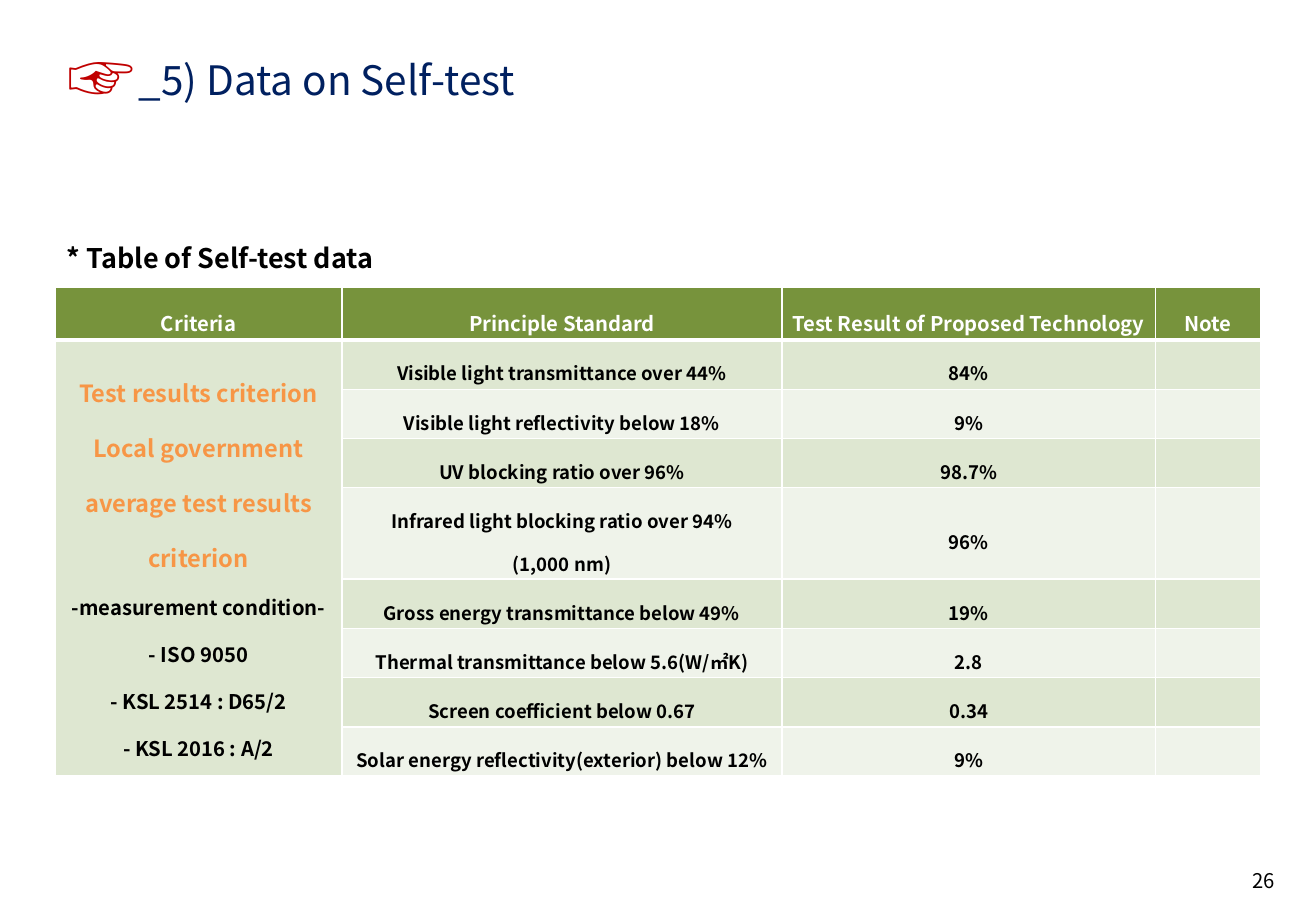
from lxml import etree
from pptx import Presentation
from pptx.dml.color import RGBColor
from pptx.enum.text import MSO_ANCHOR, MSO_AUTO_SIZE, PP_ALIGN
from pptx.oxml.ns import qn
from pptx.util import Cm, Pt

LEFT, CENTER, RIGHT = PP_ALIGN.LEFT, PP_ALIGN.CENTER, PP_ALIGN.RIGHT
TOP, MIDDLE = MSO_ANCHOR.TOP, MSO_ANCHOR.MIDDLE
FIXED = MSO_AUTO_SIZE.NONE

FONT = "Noto Sans CJK KR"
WHITE, BLACK, NAVY, RED, ORANGE = "FFFFFF", "000000", "002060", "C00000", "F79646"
HEADER_FILL = "77933C"
BAND_FILLS = ["DEE7D1", "EFF3EA"]

TITLE = "_5) Data on Self-test"
POINTER = "☞"
CAPTION = "* Table of Self-test data"
PAGE_NUMBER = "26"
HEADERS = ["Criteria", "Principle Standard", "Test Result of Proposed Technology", "Note"]
CRITERIA = [
    ("Test results criterion", 14, ORANGE),
    ("Local government average test results criterion", 14, ORANGE),
    ("-measurement condition-", 12, BLACK),
    ("- ISO 9050", 12, BLACK),
    ("- KSL 2514 : D65/2", 12, BLACK),
    ("- KSL 2016 : A/2", 12, BLACK),
]
RESULTS = [
    (["Visible light transmittance over 44%"], "84%"),
    (["Visible light reflectivity below 18%"], "9%"),
    (["UV blocking ratio over 96%"], "98.7%"),
    (["Infrared light blocking ratio over 94%", "(1,000 nm)"], "96%"),
    (["Gross energy transmittance below 49%"], "19%"),
    (["Thermal transmittance below 5.6(W/㎡K)"], "2.8"),
    (["Screen coefficient below 0.67"], "0.34"),
    (["Solar energy reflectivity(exterior) below 12%"], "9%"),
]
COLUMN_WIDTHS = [6, 9.2, 7.8, 2.2]
HEADER_HEIGHT, ROW_HEIGHT, TALL_ROW_HEIGHT = 1.1, 1.03, 1.91


def color(value):
    return RGBColor.from_string(value)


def style_font(font, size, ink, bold):
    font.name, font.size, font.bold = FONT, Pt(size), bold
    font.color.rgb = color(ink)


def write(frame, lines, align=LEFT, bold=False, spacing=None):
    for index, (text, size, ink) in enumerate(lines):
        para = frame.paragraphs[0] if index == 0 else frame.add_paragraph()
        para.alignment = align
        if spacing:
            para.line_spacing = spacing
        if not text:
            style_font(para.font, size, ink, bold)
            continue
        span = para.add_run()
        span.text = text
        style_font(span.font, size, ink, bold)
        latin = span.font._element.find(qn("a:latin"))
        east_asian = etree.Element(qn("a:ea"), typeface=FONT)
        latin.addnext(east_asian)


def add_text(page, place, line, align=LEFT, bold=False, anchor=TOP, wrap=True):
    box = page.shapes.add_textbox(*[Cm(length) for length in place])
    box.text_frame.word_wrap = wrap
    box.text_frame.vertical_anchor = anchor
    write(box.text_frame, [line], align, bold)


def add_borders(cell, top, bottom):
    properties = cell._tc.get_or_add_tcPr()
    for side, width in (("L", 1), ("R", 1), ("T", top), ("B", bottom)):
        line = etree.SubElement(properties, qn(f"a:ln{side}"), w=str(Pt(width)))
        fill = etree.SubElement(line, qn("a:solidFill"))
        etree.SubElement(fill, qn("a:srgbClr"), val=WHITE)


def format_cell(cell, row, fill):
    add_borders(cell, 3 if row == 1 else 1, 3 if row == 0 else 1)
    cell.fill.solid()
    cell.fill.fore_color.rgb = color(fill)
    cell.vertical_anchor = MIDDLE
    cell.margin_left = cell.margin_right = Cm(0.18)
    cell.margin_top = cell.margin_bottom = Cm(0.05)


def add_results_table(page):
    heights = [HEADER_HEIGHT] + [
        TALL_ROW_HEIGHT if len(standard) > 1 else ROW_HEIGHT for standard, _ in RESULTS
    ]
    table = page.shapes.add_table(
        len(heights), len(HEADERS), Cm(1.15), Cm(6.01),
        Cm(sum(COLUMN_WIDTHS)), Cm(sum(heights)),
    ).table
    for column, width in zip(table.columns, COLUMN_WIDTHS):
        column.width = Cm(width)
    for row, height in zip(table.rows, heights):
        row.height = Cm(height)

    content = [[[(text, 12, WHITE)] for text in HEADERS]]
    for index, (standard, result) in enumerate(RESULTS):
        content.append([
            CRITERIA if index == 0 else [("", 11, BLACK)],
            [(text, 11, BLACK) for text in standard],
            [(result, 11, BLACK)],
            [("", 11, BLACK)],
        ])
    table.cell(1, 0).merge(table.cell(len(RESULTS), 0))
    for row, cells in enumerate(content):
        for column, lines in enumerate(cells):
            cell = table.cell(row, column)
            band = 0 if column == 0 else (row - 1) % 2
            format_cell(cell, row, BAND_FILLS[band] if row else HEADER_FILL)
            write(cell.text_frame, lines, CENTER, True, 1.6)


def main():
    deck = Presentation()
    deck.slide_width, deck.slide_height = Cm(27.51), Cm(19.05)
    page = deck.slides.add_slide(deck.slide_layouts[5])

    title = page.shapes.title
    title.left, title.top, title.width, title.height = Cm(2.64), Cm(1.02), Cm(22.53), Cm(1.27)
    title.text_frame.auto_size = FIXED
    title.text_frame.word_wrap = True
    title.text_frame.vertical_anchor = TOP
    write(title.text_frame, [(TITLE, 24, NAVY)])

    add_text(page, (1.17, 0.61, 1.73, 1.96), (POINTER, 40, RED))
    add_text(page, (1.15, 4.93, 6.96, 0.94), (CAPTION, 16, BLACK), bold=True, wrap=False)
    add_results_table(page)
    add_text(page, (20.47, 17.91, 6.43, 1.02), (PAGE_NUMBER, 12, BLACK), RIGHT, anchor=MIDDLE)
    deck.save("out.pptx")


if __name__ == "__main__":
    main()
